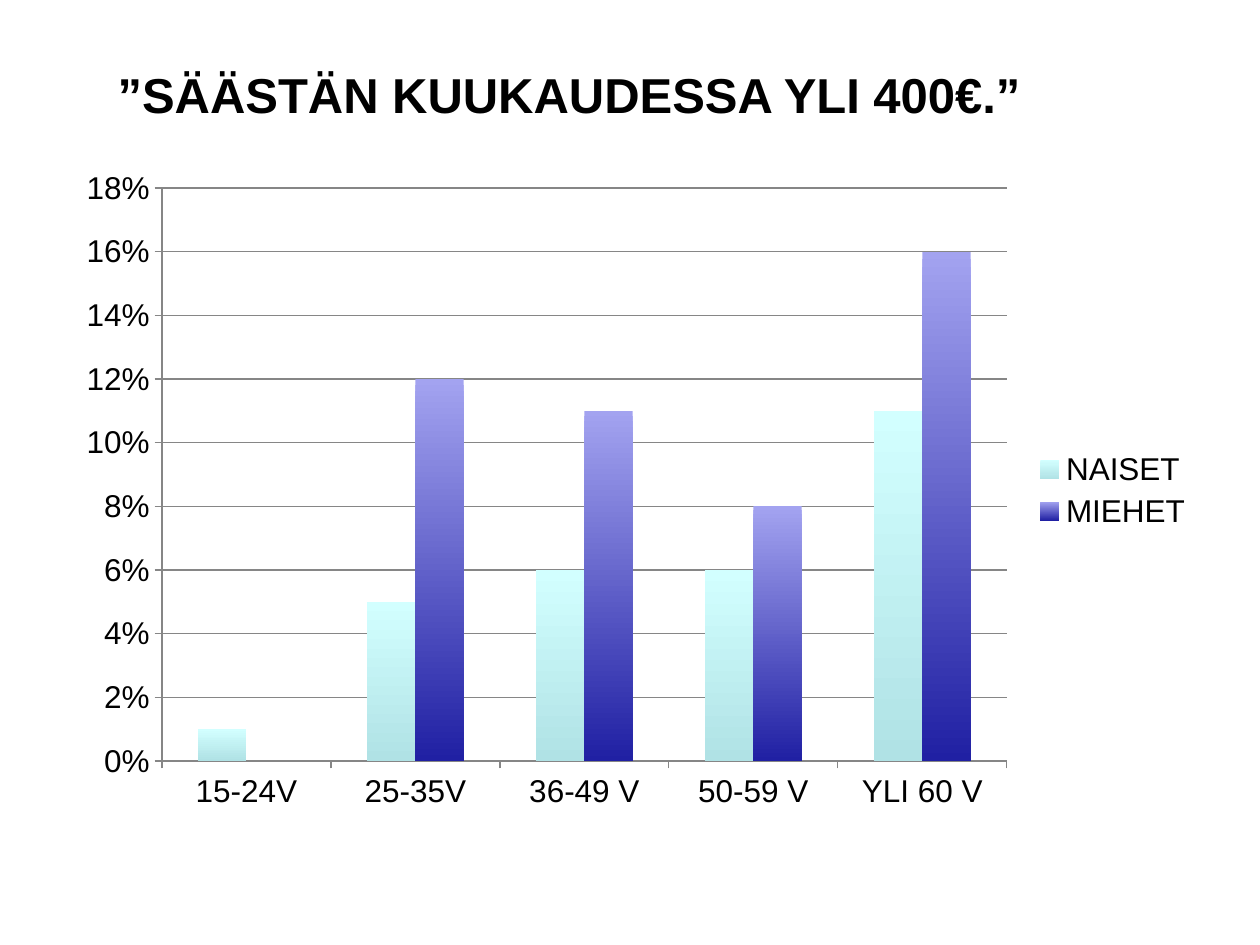
from lxml.etree import SubElement
from pptx import Presentation
from pptx.chart.data import CategoryChartData as ChartData
from pptx.dml.color import RGBColor
from pptx.enum.chart import XL_CHART_TYPE as ChartType
from pptx.enum.chart import XL_LEGEND_POSITION as LegendPosition
from pptx.enum.chart import XL_TICK_MARK as TickMark
from pptx.enum.text import MSO_ANCHOR as Anchor
from pptx.enum.text import MSO_AUTO_SIZE as AutoSize
from pptx.enum.text import PP_ALIGN as Align
from pptx.oxml.ns import qn
from pptx.util import Emu, Pt

PX = 914400 // 126
FONT = "Arial"
COLORS = {
    "text": "000000",
    "line": "868686",
    "women_top": "D2FFFF",
    "women_bottom": "B0E2E5",
    "men_top": "A3A3F0",
    "men_bottom": "2020A3",
}
TITLE = "”SÄÄSTÄN KUUKAUDESSA YLI 400€.”"
AGE_GROUPS = ["15-24V", "25-35V", "36-49 V", "50-59 V", "YLI 60 V"]
SAVERS = {
    "NAISET": ("women", [0.01, 0.05, 0.06, 0.06, 0.11]),
    "MIEHET": ("men", [0, 0.12, 0.11, 0.08, 0.16]),
}
CHART_BOX = (64, 158, 1142, 665)
PLOT_BOX = (162, 188, 845, 573)


def px(length):
    return Emu(length * PX)


def color(name):
    return RGBColor.from_string(COLORS[name])


def style_font(font, size, bold=False):
    font.name = FONT
    font.size = Pt(size)
    font.bold = bold
    font.color.rgb = color("text")


def set_title(page):
    title = page.shapes.title
    title.left, title.top, title.width, title.height = map(px, (105, 53, 1012, 104))
    frame = title.text_frame
    frame.text = TITLE
    frame.auto_size = AutoSize.NONE
    frame.vertical_anchor = Anchor.TOP
    frame.margin_top = px(11)
    para = frame.paragraphs[0]
    para.alignment = Align.LEFT
    style_font(para.runs[0].font, 28, bold=True)


def place_plot(chart):
    """Fix the inner plot area as fractions of the chart box."""
    left, top, width, height = CHART_BOX
    plot_left, plot_top, plot_width, plot_height = PLOT_BOX
    area = chart.element.find(".//" + qn("c:plotArea"))
    for old in area.findall(qn("c:layout")):
        area.remove(old)
    layout = SubElement(area, qn("c:layout"))
    area.insert(0, layout)
    manual = SubElement(layout, qn("c:manualLayout"))
    settings = {
        "layoutTarget": "inner",
        "xMode": "edge",
        "yMode": "edge",
        "x": round((plot_left - left) / width, 4),
        "y": round((plot_top - top) / height, 4),
        "w": round(plot_width / width, 4),
        "h": round(plot_height / height, 4),
    }
    for tag, value in settings.items():
        SubElement(manual, qn("c:" + tag)).set("val", str(value))


def style_axis(axis):
    axis.major_tick_mark = TickMark.OUTSIDE
    axis.minor_tick_mark = TickMark.NONE
    axis.format.line.color.rgb = color("line")
    axis.format.line.width = Pt(0.75)


def shade_series(series, name):
    fill = series.format.fill
    fill.gradient()
    fill.gradient_angle = 270
    for stop, end in zip(fill.gradient_stops, ("top", "bottom")):
        stop.color.rgb = color(f"{name}_{end}")
    series.invert_if_negative = False


def add_savings_chart(page):
    data = ChartData(number_format="0%")
    data.categories = AGE_GROUPS
    for label, (_, shares) in SAVERS.items():
        data.add_series(label, shares)
    chart = page.shapes.add_chart(
        ChartType.COLUMN_CLUSTERED, *map(px, CHART_BOX), data
    ).chart
    chart.has_title = False
    style_font(chart.font, 18)

    # Axes
    style_axis(chart.category_axis)
    values = chart.value_axis
    style_axis(values)
    values.minimum_scale, values.maximum_scale = 0, 0.18
    values.major_unit = 0.02
    values.tick_labels.number_format = "0%"
    values.tick_labels.number_format_is_linked = False
    values.has_major_gridlines = True
    grid = values.major_gridlines.format.line
    grid.color.rgb = color("line")
    grid.width = Pt(0.75)

    # Columns
    plot = chart.plots[0]
    plot.gap_width, plot.overlap = 150, 0
    plot.vary_by_categories = False
    for series in plot.series:
        shade_series(series, SAVERS[series.name][0])

    # Legend
    chart.has_legend = True
    chart.legend.position = LegendPosition.RIGHT
    chart.legend.include_in_layout = False
    place_plot(chart)


def main():
    deck = Presentation()
    deck.slide_width, deck.slide_height = px(1260), px(945)
    page = deck.slides.add_slide(deck.slide_layouts[5])
    set_title(page)
    add_savings_chart(page)
    deck.save("out.pptx")


if __name__ == "__main__":
    main()
